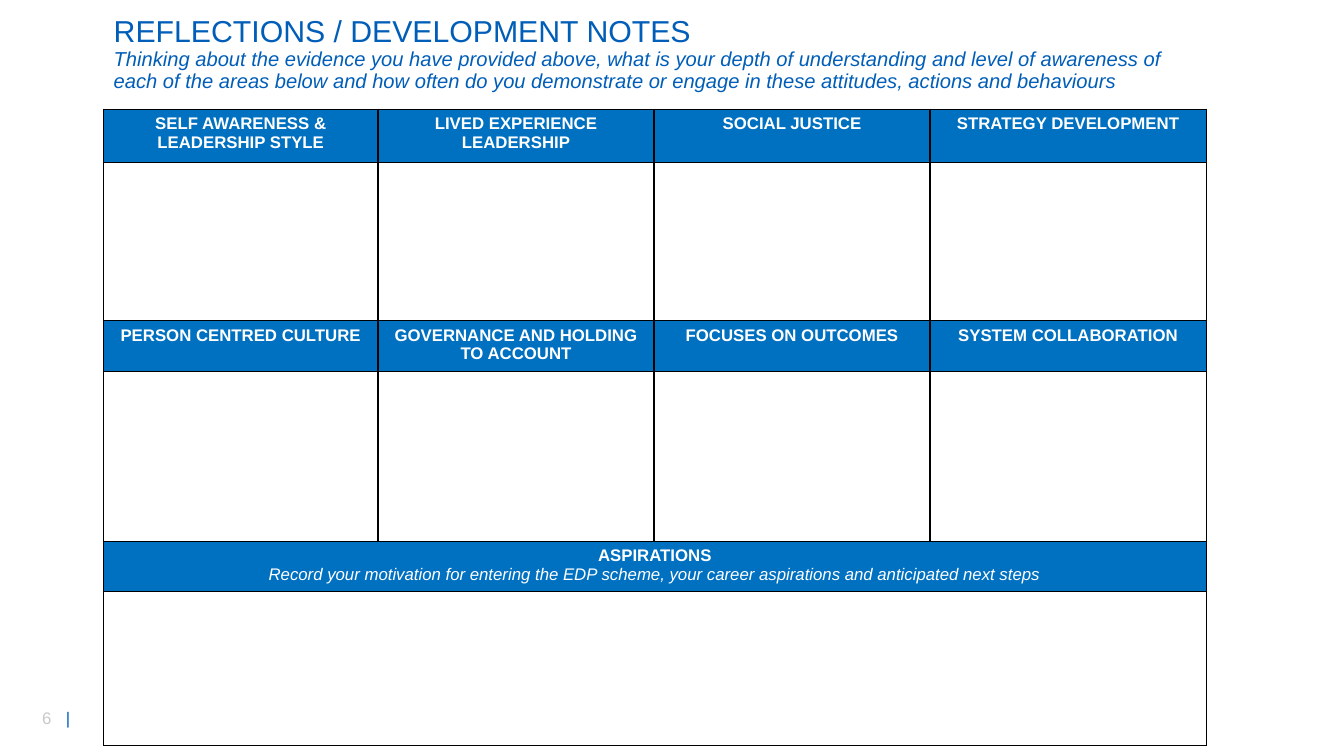
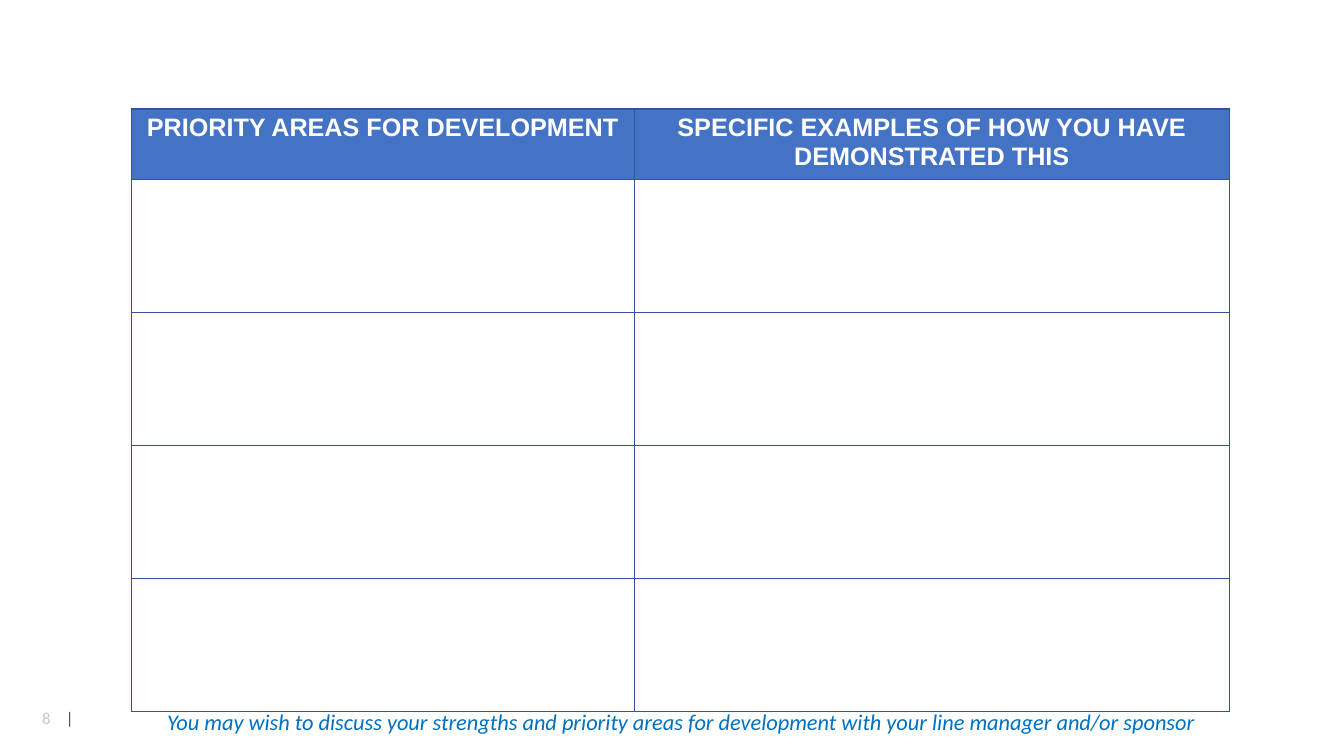
from lxml import etree
from pptx import Presentation
from pptx.dml.color import RGBColor
from pptx.enum.text import MSO_ANCHOR, MSO_AUTO_SIZE, PP_ALIGN
from pptx.oxml.ns import qn
from pptx.util import Pt

LEFT, CENTER = PP_ALIGN.LEFT, PP_ALIGN.CENTER
MIDDLE = MSO_ANCHOR.MIDDLE
NO_FIT = MSO_AUTO_SIZE.NONE
TITLE_ONLY, BLANK = 5, 6

WHITE, BLACK, GREY = "FFFFFF", "000000", "C9C9C9"
TITLE_BLUE, BAND_BLUE = "005EB8", "0070C0"
HEADER_BLUE, GRID_BLUE = "4472C4", "2F5597"

TITLE = "REFLECTIONS / DEVELOPMENT NOTES"
PROMPT = (
    "Thinking about the evidence you have provided above, what is your depth of "
    "understanding and level of awareness of",
    "each of the areas below and how often do you demonstrate or engage in these "
    "attitudes, actions and behaviours",
)
AREAS = {
    0: ["SELF AWARENESS & LEADERSHIP STYLE", "LIVED EXPERIENCE LEADERSHIP",
        "SOCIAL JUSTICE", "STRATEGY DEVELOPMENT"],
    2: ["PERSON CENTRED CULTURE", "GOVERNANCE AND HOLDING TO ACCOUNT",
        "FOCUSES ON OUTCOMES", "SYSTEM COLLABORATION"],
}
ASPIRATIONS_ROW = 4
ASPIRATIONS = ("ASPIRATIONS",
               "Record your motivation for entering the EDP scheme, your career "
               "aspirations and anticipated next steps")
PRIORITIES = ["PRIORITY AREAS FOR DEVELOPMENT",
              "SPECIFIC EXAMPLES OF HOW YOU HAVE DEMONSTRATED THIS"]
NOTE = ("You may wish to discuss your strengths and priority areas for development "
        "with your line manager and/or sponsor")


def rgb(color):
    return RGBColor.from_string(color)


def set_font(font, size, color, name="Arial", bold=False, italic=False):
    font.name, font.size = name, Pt(size)
    font.bold, font.italic = bold, italic
    font.color.rgb = rgb(color)


def add_text_box(slide, left, top, width, height):
    sp = slide.shapes.add_textbox(Pt(left), Pt(top), Pt(width), Pt(height))
    sp.text_frame.word_wrap = True
    return sp.text_frame.paragraphs[0]


def add_page_number(slide, number, font_name):
    p = add_text_box(slide, 23, 502, 51, 22)
    tabs = etree.SubElement(p._p.get_or_add_pPr(), qn("a:tabLst"))
    etree.SubElement(tabs, qn("a:tab"), pos=str(Pt(17)), algn="l")
    for text, color in ((f"{number}\t", GREY), ("|", TITLE_BLUE)):
        r = p.add_run()
        r.text = text
        set_font(r.font, 12, color, font_name)


def add_title(slide, left, top, width, height):
    sp = slide.shapes.title
    sp.left, sp.top, sp.width, sp.height = Pt(left), Pt(top), Pt(width), Pt(height)
    tf = sp.text_frame
    tf.auto_size, tf.vertical_anchor = NO_FIT, MIDDLE
    p = tf.paragraphs[0]
    p.alignment, p.line_spacing = LEFT, 0.9
    r = p.add_run()
    r.text = TITLE
    set_font(r.font, 21.6, TITLE_BLUE)
    for line in PROMPT:
        p.add_line_break()
        r = p.add_run()
        r.text = line
        set_font(r.font, 14.4, TITLE_BLUE, italic=True)


def set_borders(cell, color):
    tcPr = cell._tc.get_or_add_tcPr()
    for side in ("lnL", "lnR", "lnT", "lnB"):
        ln = etree.SubElement(tcPr, qn(f"a:{side}"), w=str(Pt(1)))
        fill = etree.SubElement(ln, qn("a:solidFill"))
        etree.SubElement(fill, qn("a:srgbClr"), val=color)


def add_grid(slide, left, top, widths, heights, line_color):
    frame = slide.shapes.add_table(len(heights), len(widths), Pt(left), Pt(top),
                                   Pt(sum(widths)), Pt(sum(heights)))
    table = frame.table
    table.first_row = table.horz_banding = False
    for column, width in zip(table.columns, widths):
        column.width = Pt(width)
    for row, height in zip(table.rows, heights):
        row.height = Pt(height)
    for cell in table.iter_cells():
        set_borders(cell, line_color)
        cell.fill.background()
    return table


def fill_heading(cell, text, size, color):
    cell.fill.solid()
    cell.fill.fore_color.rgb = rgb(color)
    p = cell.text_frame.paragraphs[0]
    p.text, p.alignment = text, CENTER
    set_font(p.font, size, WHITE, bold=True)


def add_areas_table(slide, left, top):
    table = add_grid(slide, left, top, [196] + [197.2] * 3,
                     [38, 113.2, 34.8, 121.4, 35, 110], BLACK)
    for row, headings in AREAS.items():
        for col, text in enumerate(headings):
            fill_heading(table.cell(row, col), text, 12, BAND_BLUE)
    for row in (ASPIRATIONS_ROW, ASPIRATIONS_ROW + 1):
        table.cell(row, 0).merge(table.cell(row, 3))
    heading, hint = ASPIRATIONS
    cell = table.cell(ASPIRATIONS_ROW, 0)
    fill_heading(cell, heading, 12, BAND_BLUE)
    p = cell.text_frame.add_paragraph()
    p.text, p.alignment = hint, CENTER
    set_font(p.font, 12, WHITE, italic=True)


def add_priorities_table(slide, left, top):
    table = add_grid(slide, left, top, [359.4, 425], [50.6] + [95] * 4, GRID_BLUE)
    for col, text in enumerate(PRIORITIES):
        fill_heading(table.cell(0, col), text, 18, HEADER_BLUE)


def add_note(slide, left, top, width, height):
    p = add_text_box(slide, left, top, width, height)
    p.text = NOTE
    set_font(p.font, 16, BAND_BLUE, "Calibri", italic=True)


def build_reflections(prs):
    slide = prs.slides.add_slide(prs.slide_layouts[TITLE_ONLY])
    add_page_number(slide, 6, "Arial")
    add_title(slide, 74, 15, 838, 48)
    add_areas_table(slide, 74, 78)


def build_priorities(prs):
    slide = prs.slides.add_slide(prs.slide_layouts[BLANK])
    add_page_number(slide, 8, "Calibri")
    add_note(slide, 112.3, 502.5, 760, 26.6)
    add_priorities_table(slide, 93.7, 77.8)


def main():
    prs = Presentation()
    prs.slide_width, prs.slide_height = Pt(960), Pt(540)
    build_reflections(prs)
    build_priorities(prs)
    prs.save("out.pptx")


if __name__ == "__main__":
    main()
